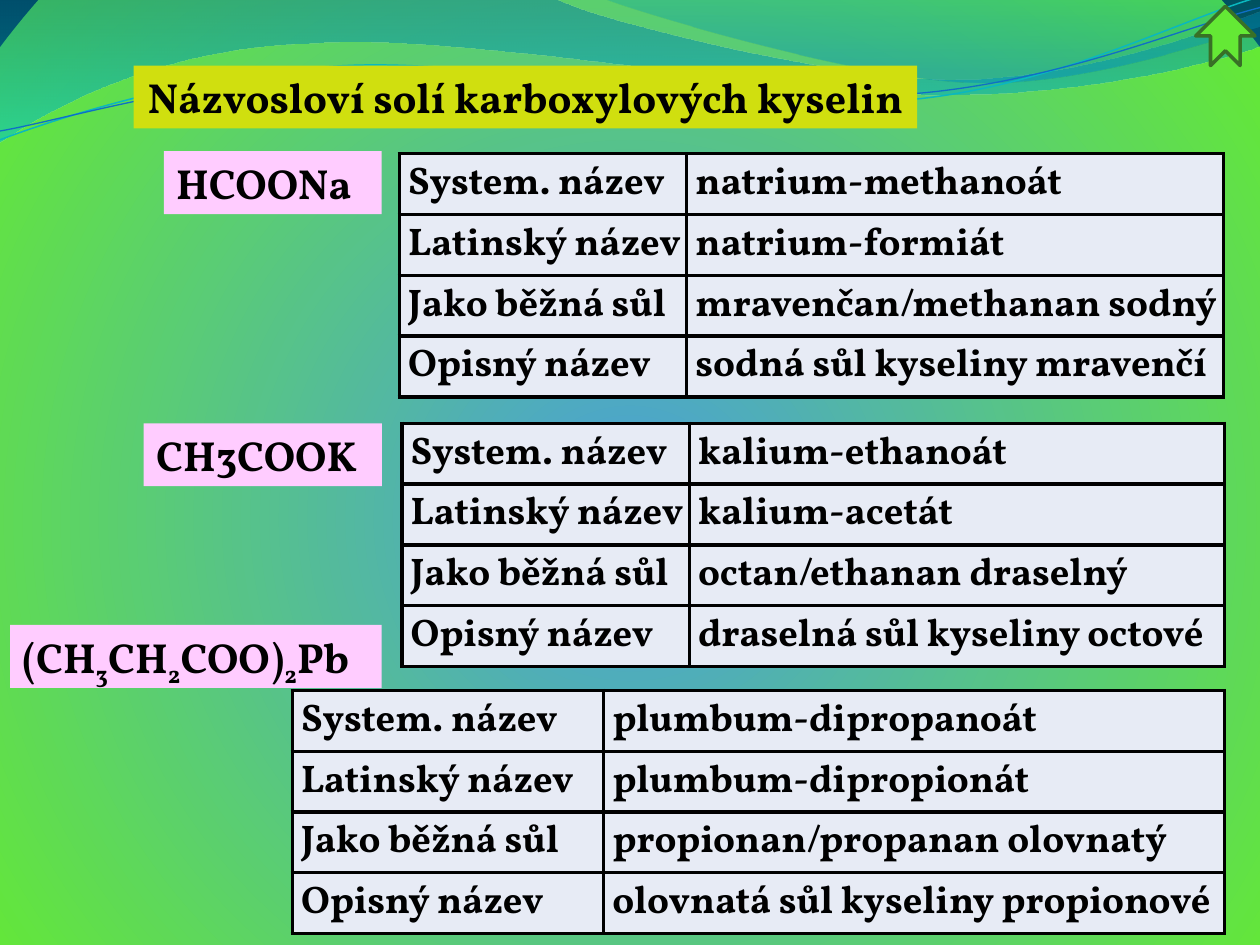
from dataclasses import dataclass

from lxml import etree
from pptx import Presentation
from pptx import util as u
from pptx.dml.color import RGBColor
from pptx.enum import shapes, text
from pptx.oxml import ns


@dataclass(frozen=True)
class Theme:
    font: str = "Vollkorn"
    ink: str = "000000"
    title_fill: str = "D0DF0F"
    formula_fill: str = "FFCCFF"
    cell_fill: str = "E7EBF5"
    arrow_fill: str = "64E935"
    arrow_line: str = "387026"
    upper_thread: str = "0AB8BF"
    lower_thread: str = "0F6FC6"
    heading_size: int = 24
    cell_size: int = 22
    border: float = 2.25
    # Gradient stops: position, colour, opacity (all but colour in percent)
    backdrop: tuple = ((0, "4A9EDB", 100), (100, "64E935", 100), (100, "003141", 100))
    wide_wave: tuple = ((0, "0074A1", 45), (100, "00C6CF", 55))
    right_wave: tuple = ((0, "00A1A9", 30), (80, "008BBF", 45))


THEME = Theme()
NAME_KINDS = ("System. název", "Latinský název", "Jako běžná sůl", "Opisný název")
TABLE_HEIGHT = 1.93
FORMULA_RIGHT = 3.03

# Underscores enclose subscripts; label is top, width; table is left, top, columns
SALTS = (
    ("HCOONa", (1.2, 1.73), (3.17, 1.22, 2.28, 4.26),
     ("natrium-methanoát", "natrium-formiát",
      "mravenčan/methanan sodný", "sodná sůl kyseliny mravenčí")),
    ("CH3COOK", (3.36, 1.89), (3.19, 3.36, 2.28, 4.25),
     ("kalium-ethanoát", "kalium-acetát",
      "octan/ethanan draselný", "draselná sůl kyseliny octové")),
    ("(CH_3_CH_2_COO)_2_Pb", (4.96, 2.95), (2.32, 5.48, 2.47, 4.93),
     ("plumbum-dipropanoát", "plumbum-dipropionát",
      "propionan/propanan olovnatý", "olovnatá sůl kyseliny propionové")),
)

# Each step is a line (one point) or a cubic curve (three points)
WIDE_WAVE = ((0, 0), [
    [(4.4, -0.01)],
    [(4.76, 0.17), (6.64, 0.63), (7.58, 0.63)],
    [(8.53, 0.63), (9.58, 0.26), (10, 0.09)],
    [(10.01, 0.36)],
    [(9.83, 0.44), (8.7, 0.76), (7.46, 0.75)],
    [(6.22, 0.75), (3.82, 0.28), (2.57, 0.34)],
    [(1.29, 0.36), (0.46, 0.83), (-0.01, 1.13)]])
RIGHT_WAVE = ((4.79, -0.01), [
    [(5.09, 0.11), (6.82, 0.62), (7.69, 0.65)],
    [(8.56, 0.69), (9.61, 0.32), (10, 0.21)],
    [(10, 0)]])
UPPER_THREAD = ((0, 1.11), [
    [(0.48, 0.93), (1.58, 0.57), (2.77, 0.52)],
    [(3.95, 0.47), (5.93, 0.89), (7.13, 0.8)],
    [(8.33, 0.71), (9.38, 0.15), (9.98, -0.02)]])
LOWER_THREAD = ((0, 1.04), [
    [(0.47, 0.96), (1.64, 0.61), (2.83, 0.56)],
    [(4.03, 0.51), (5.97, 0.84), (7.17, 0.75)],
    [(8.36, 0.67), (9.41, 0.21), (10, 0.06)]])


def rgb(colour):
    return RGBColor.from_string(colour)


def child(parent, tag, **attributes):
    return etree.SubElement(parent, ns.qn(tag), attributes)


def set_gradient(holder, stops, circle=False):
    """Swap the solid fill inside holder for a gradient."""
    solid = holder.find(ns.qn("a:solidFill"))
    gradient = etree.Element(ns.qn("a:gradFill"), rotWithShape="1")
    stop_list = child(gradient, "a:gsLst")
    for position, colour, opacity in stops:
        stop = child(stop_list, "a:gs", pos=str(position * 1000))
        tint = child(stop, "a:srgbClr", val=colour)
        if opacity < 100:
            child(tint, "a:alpha", val=str(opacity * 1000))
    if circle:
        route = child(gradient, "a:path", path="circle")
        child(route, "a:fillToRect", l="10000", t="110000", r="10000", b="100000")
    else:
        child(gradient, "a:lin", ang="5400000", scaled="0")
    holder.replace(solid, gradient)


def style_paragraph(paragraph, size):
    font = paragraph.font
    font.name, font.size, font.bold = THEME.font, u.Pt(size), True
    font.color.rgb = rgb(THEME.ink)


def draw_outline(slide, outline, close):
    """Draw an outline; groups of three points become cubic curves."""
    (left, top), segments = outline
    builder = slide.shapes.build_freeform(u.Inches(left), u.Inches(top))
    builder.add_line_segments([(u.Inches(x), u.Inches(y))
                               for segment in segments for x, y in segment], close=close)
    shape = builder.convert_to_shape()
    shape.shadow.inherit = False
    lines = iter(shape.element.findall(".//" + ns.qn("a:lnTo")))
    for segment in segments:
        first, *others = [next(lines) for _ in segment]
        if others:
            curve = etree.Element(ns.qn("a:cubicBezTo"))
            first.addprevious(curve)
            for line in (first, *others):
                curve.append(line[0])
                line.getparent().remove(line)
    return shape


def add_backdrop(slide):
    slide.background.fill.solid()
    set_gradient(slide.element.find(".//" + ns.qn("p:bgPr")), THEME.backdrop, circle=True)
    for outline, stops in ((WIDE_WAVE, THEME.wide_wave), (RIGHT_WAVE, THEME.right_wave)):
        wave = draw_outline(slide, outline, True)
        wave.line.fill.background()
        wave.fill.solid()
        set_gradient(wave.element.spPr, stops)
    for outline, colour, width in ((UPPER_THREAD, THEME.upper_thread, 0.85),
                                   (LOWER_THREAD, THEME.lower_thread, 0.75)):
        thread = draw_outline(slide, outline, False)
        thread.fill.background()
        thread.line.color.rgb = rgb(colour)
        thread.line.width = u.Pt(width)


def add_title(slide, left, top, width, height):
    title = slide.shapes.title
    slide.shapes.element.append(title.element)  # in front of the waves
    title.left, title.top = u.Inches(left), u.Inches(top)
    title.width, title.height = u.Inches(width), u.Inches(height)
    title.fill.solid()
    title.fill.fore_color.rgb = rgb(THEME.title_fill)
    frame = title.text_frame
    frame.text = "Názvosloví solí karboxylových kyselin"
    frame.auto_size = text.MSO_AUTO_SIZE.NONE
    frame.vertical_anchor = text.MSO_ANCHOR.MIDDLE
    frame.paragraphs[0].alignment = text.PP_ALIGN.CENTER
    style_paragraph(frame.paragraphs[0], THEME.heading_size)


def add_formula(slide, formula, top, width):
    label = slide.shapes.add_textbox(u.Inches(FORMULA_RIGHT - width), u.Inches(top),
                                     u.Inches(width), u.Inches(0.5))
    label.fill.solid()
    label.fill.fore_color.rgb = rgb(THEME.formula_fill)
    label.text_frame.word_wrap = True
    paragraph = label.text_frame.paragraphs[0]
    style_paragraph(paragraph, THEME.heading_size)
    for index, part in enumerate(formula.split("_")):
        run = paragraph.add_run()
        run.text = part
        if index % 2:
            run._r.get_or_add_rPr().set("baseline", "-25000")


def fill_cell(cell, words):
    cell.text = words
    cell.vertical_anchor = text.MSO_ANCHOR.MIDDLE
    cell.margin_left, cell.margin_right = u.Inches(0.07), u.Inches(0.01)
    cell.margin_top, cell.margin_bottom = u.Inches(0.01), 0
    style_paragraph(cell.text_frame.paragraphs[0], THEME.cell_size)
    properties = cell._tc.get_or_add_tcPr()
    for side in ("a:lnL", "a:lnR", "a:lnT", "a:lnB"):
        edge = child(properties, side, w=str(u.Pt(THEME.border)))
        child(child(edge, "a:solidFill"), "a:srgbClr", val=THEME.ink)
    cell.fill.solid()
    cell.fill.fore_color.rgb = rgb(THEME.cell_fill)


def add_names(slide, names, left, top, *widths):
    table = slide.shapes.add_table(
        len(names), len(widths), u.Inches(left), u.Inches(top),
        u.Inches(sum(widths)), u.Inches(TABLE_HEIGHT)).table
    table.first_row = table.horz_banding = False
    for column, width in zip(table.columns, widths):
        column.width = u.Inches(width)
    for row, entries in zip(table.rows, zip(NAME_KINDS, names)):
        for cell, words in zip(row.cells, entries):
            fill_cell(cell, words)


def add_up_arrow(slide, left, top, size):
    arrow = slide.shapes.add_shape(shapes.MSO_SHAPE.NOTCHED_RIGHT_ARROW, u.Inches(left),
                                   u.Inches(top), u.Inches(size), u.Inches(size))
    arrow.rotation = 270
    arrow.shadow.inherit = False
    arrow.fill.solid()
    arrow.fill.fore_color.rgb = rgb(THEME.arrow_fill)
    arrow.line.color.rgb = rgb(THEME.arrow_line)
    arrow.line.width = u.Pt(2)


deck = Presentation()
deck.slide_width, deck.slide_height = u.Inches(10), u.Inches(7.5)
slide = deck.slides.add_slide(deck.slide_layouts[5])
add_backdrop(slide)
add_title(slide, 1.06, 0.52, 6.22, 0.5)
for formula, label_box, table_box, names in SALTS:
    add_names(slide, names, *table_box)
    add_formula(slide, formula, *label_box)
add_up_arrow(slide, 9.49, 0.05, 0.47)
deck.save("out.pptx")
